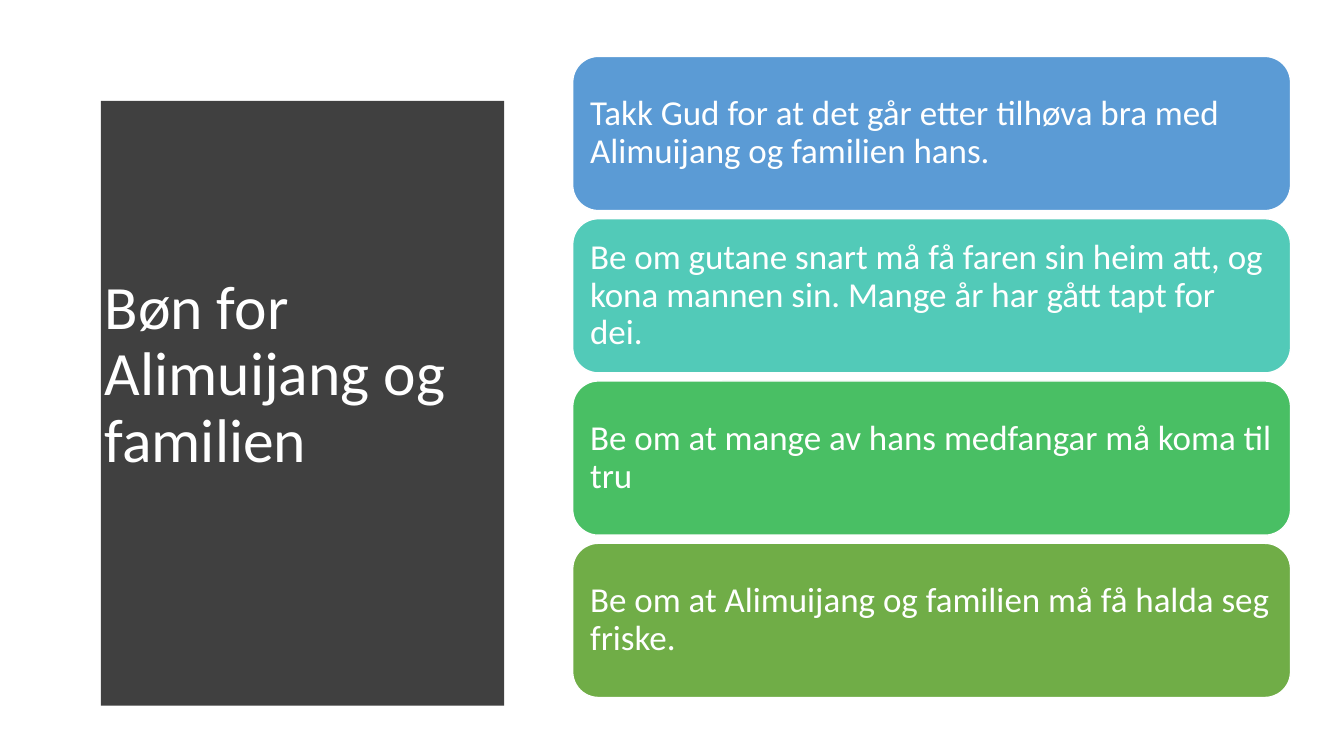
"""Build a prayer slide: a curved title panel beside four coloured cards."""
from pptx import Presentation
from pptx.dml.color import RGBColor
from pptx.enum.shapes import MSO_SHAPE as Shape
from pptx.enum.text import MSO_ANCHOR as Anchor, PP_ALIGN as Align
from pptx.util import Inches, Pt

COLOURS = {
    "panel": "404040",
    "white": "FFFFFF",
    "blue": "5B9BD5",
    "teal": "52CAB8",
    "green": "49BF64",
    "olive": "70AD47",
}
PRAYERS = [
    ("blue", "Takk Gud for at det går etter tilhøva bra med Alimuijang og familien hans."),
    ("teal", "Be om gutane snart må få faren sin heim att, og kona mannen sin. "
             "Mange år har gått tapt for dei."),
    ("green", "Be om at mange av hans medfangar må koma til tru"),
    ("olive", "Be om at Alimuijang og familien må få halda seg friske."),
]
PANEL_LEFT, PANEL_TOP, PANEL_BOTTOM = 0.53, 0.52, 6.96
CORNER_X, BULGE_X, BULGE_Y = 5.08, 5.32, 3.6
CURVE_STEPS = 40
CARD_LEFT, CARD_TOP, CARD_WIDTH, CARD_HEIGHT = 5.68, 0.56, 7.12, 1.53
CARD_PITCH = 1.61


def colour(name):
    return RGBColor.from_string(COLOURS[name])


def write_text(shape, text, size):
    frame = shape.text_frame
    frame.word_wrap = True
    frame.vertical_anchor = Anchor.MIDDLE
    paragraph = frame.paragraphs[0]
    paragraph.text = text
    paragraph.alignment = Align.LEFT
    paragraph.line_spacing = 0.9
    paragraph.font.name = "Calibri"
    paragraph.font.size = Pt(size)
    paragraph.font.color.rgb = colour("white")
    return frame


def curve_point(step):
    y = PANEL_TOP + (PANEL_BOTTOM - PANEL_TOP) * step / CURVE_STEPS
    end = PANEL_TOP if y < BULGE_Y else PANEL_BOTTOM
    share = (y - BULGE_Y) / (end - BULGE_Y)
    return BULGE_X - (BULGE_X - CORNER_X) * share ** 2, y


def add_panel(slide):
    builder = slide.shapes.build_freeform(PANEL_LEFT, PANEL_TOP, scale=Inches(1))
    curve = [curve_point(step) for step in range(CURVE_STEPS + 1)]
    builder.add_line_segments(curve + [(PANEL_LEFT, PANEL_BOTTOM)], close=True)
    panel = builder.convert_to_shape()
    panel.shadow.inherit = False
    panel.fill.solid()
    panel.fill.fore_color.rgb = colour("panel")
    panel.line.fill.background()


def add_title(slide, text):
    box = slide.shapes.add_textbox(Inches(0.94), Inches(1.11), Inches(3.74), Inches(5.24))
    write_text(box, text, 44)


def add_card(slide, row, fill, text):
    card = slide.shapes.add_shape(
        Shape.ROUNDED_RECTANGLE, Inches(CARD_LEFT), Inches(CARD_TOP + row * CARD_PITCH),
        Inches(CARD_WIDTH), Inches(CARD_HEIGHT))
    card.shadow.inherit = False
    card.fill.solid()
    card.fill.fore_color.rgb = colour(fill)
    card.line.color.rgb = colour("white")
    card.line.width = Pt(1)
    frame = write_text(card, text, 25)
    frame.margin_left = frame.margin_right = Inches(0.1)
    frame.margin_top = frame.margin_bottom = Inches(0.1)


def main():
    presentation = Presentation()
    presentation.slide_width = Inches(13.33)
    presentation.slide_height = Inches(7.5)
    slide = presentation.slides.add_slide(presentation.slide_layouts[6])
    add_panel(slide)
    add_title(slide, "Bøn for Alimuijang og familien")
    for row, (fill, text) in enumerate(PRAYERS):
        add_card(slide, row, fill, text)
    presentation.save("out.pptx")


if __name__ == "__main__":
    main()
